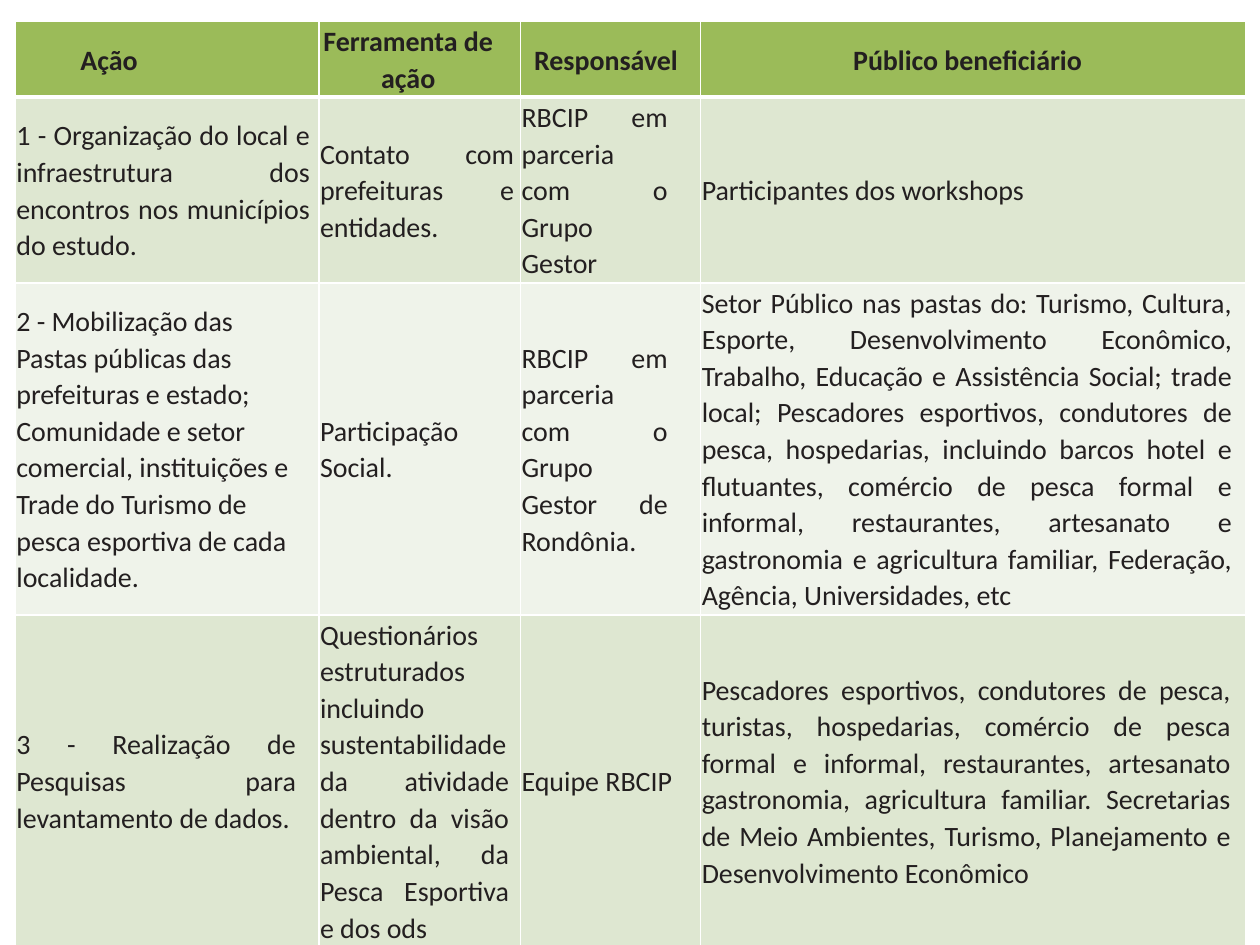
from lxml import etree
from pptx import Presentation
from pptx import util as u
from pptx.dml.color import RGBColor
from pptx.enum import text
from pptx.oxml.ns import qn

WHITE = RGBColor(0xFF, 0xFF, 0xFF)
INK = RGBColor(0x23, 0x1F, 0x20)
GREEN = RGBColor(0x9B, 0xBB, 0x59)
BAND = RGBColor(0xDE, 0xE7, 0xD1)
PALE = RGBColor(0xEF, 0xF3, 0xEA)
LEFT, CENTER, JUSTIFY = (text.PP_ALIGN.LEFT, text.PP_ALIGN.CENTER,
                         text.PP_ALIGN.JUSTIFY)

COLS = [2.41, 1.6, 1.43, 4.33]
HEIGHTS = [0.58, 1.46, 2.56, 2.57]
ROWS = [
    ["Ação", "Ferramenta de ação", "Responsável", "Público beneficiário"],
    ["1 - Organização do local e infraestrutura dos encontros nos municípios do estudo.",
     "Contato com prefeituras e entidades.",
     "RBCIP em parceria com o Grupo Gestor",
     "Participantes dos workshops"],
    ["2 - Mobilização das Pastas públicas das prefeituras e estado; Comunidade e setor "
     "comercial, instituições e Trade do Turismo de pesca esportiva de cada localidade.",
     "Participação Social.",
     "RBCIP em parceria com o Grupo Gestor de Rondônia.",
     "Setor Público nas pastas do: Turismo, Cultura, Esporte, Desenvolvimento Econômico, "
     "Trabalho, Educação e Assistência Social; trade local; Pescadores esportivos, "
     "condutores de pesca, hospedarias, incluindo barcos hotel e flutuantes, comércio de "
     "pesca formal e informal, restaurantes, artesanato e gastronomia e agricultura "
     "familiar, Federação, Agência, Universidades, etc"],
    ["3 - Realização de Pesquisas para levantamento de dados.",
     "Questionários estruturados incluindo sustentabilidade da atividade dentro da visão "
     "ambiental, da Pesca Esportiva e dos ods",
     "Equipe RBCIP",
     "Pescadores esportivos, condutores de pesca, turistas, hospedarias, comércio de pesca "
     "formal e informal, restaurantes, artesanato gastronomia, agricultura familiar. "
     "Secretarias de Meio Ambientes, Turismo, Planejamento e Desenvolvimento Econômico"],
]
RIGHT_INDENTS = [
    [0.92, 0.18, 0.07, 0.09],
    [0.06, 0.04, 0.25, 0.1],
    [0.18, 0.04, 0.25, 0.1],
    [0.17, 0.08, 0, 0.11],
]


def write(cell, words, align=JUSTIFY, bold=False, indent=0):
    p = cell.text_frame.paragraphs[0]
    p.alignment = align
    p.line_spacing = 1.07
    p.space_after = u.Pt(8)
    p._p.get_or_add_pPr().set("marR", str(u.Inches(indent)))
    r = p.add_run()
    r.text = words
    f = r.font
    f.name, f.size, f.bold = "Calibri", u.Pt(16), bold
    f.color.rgb = INK


def style(cell, fill, bottom=1):
    cell.margin_left = cell.margin_right = u.Inches(0.01)
    cell.margin_top = cell.margin_bottom = u.Inches(0.01)
    cell.vertical_anchor = text.MSO_ANCHOR.MIDDLE
    tc_pr = cell._tc.get_or_add_tcPr()
    for side, width in (("L", 1), ("R", 1), ("T", 1), ("B", bottom)):
        ln = etree.SubElement(tc_pr, qn(f"a:ln{side}"), w=str(u.Pt(width)))
        solid = etree.SubElement(ln, qn("a:solidFill"))
        etree.SubElement(solid, qn("a:srgbClr"), val=str(WHITE))
    cell.fill.solid()
    cell.fill.fore_color.rgb = fill


prs = Presentation()
prs.slide_width, prs.slide_height = u.Inches(10), u.Inches(7.5)
s = prs.slides.add_slide(prs.slide_layouts[6])
table = s.shapes.add_table(len(ROWS), len(COLS), u.Inches(0.12), u.Inches(0.17),
                           u.Inches(sum(COLS)), u.Inches(sum(HEIGHTS))).table
for col, width in zip(table.columns, COLS):
    col.width = u.Inches(width)
for row, height in zip(table.rows, HEIGHTS):
    row.height = u.Inches(height)

for i, row in enumerate(ROWS):
    header = i == 0
    fill = GREEN if header else BAND if i % 2 else PALE
    for j, words in enumerate(row):
        cell = table.cell(i, j)
        align = CENTER if header else LEFT if (i, j) == (2, 0) else JUSTIFY
        style(cell, fill, bottom=3 if header else 1)
        write(cell, words, align=align, bold=header, indent=RIGHT_INDENTS[i][j])

prs.save("out.pptx")
